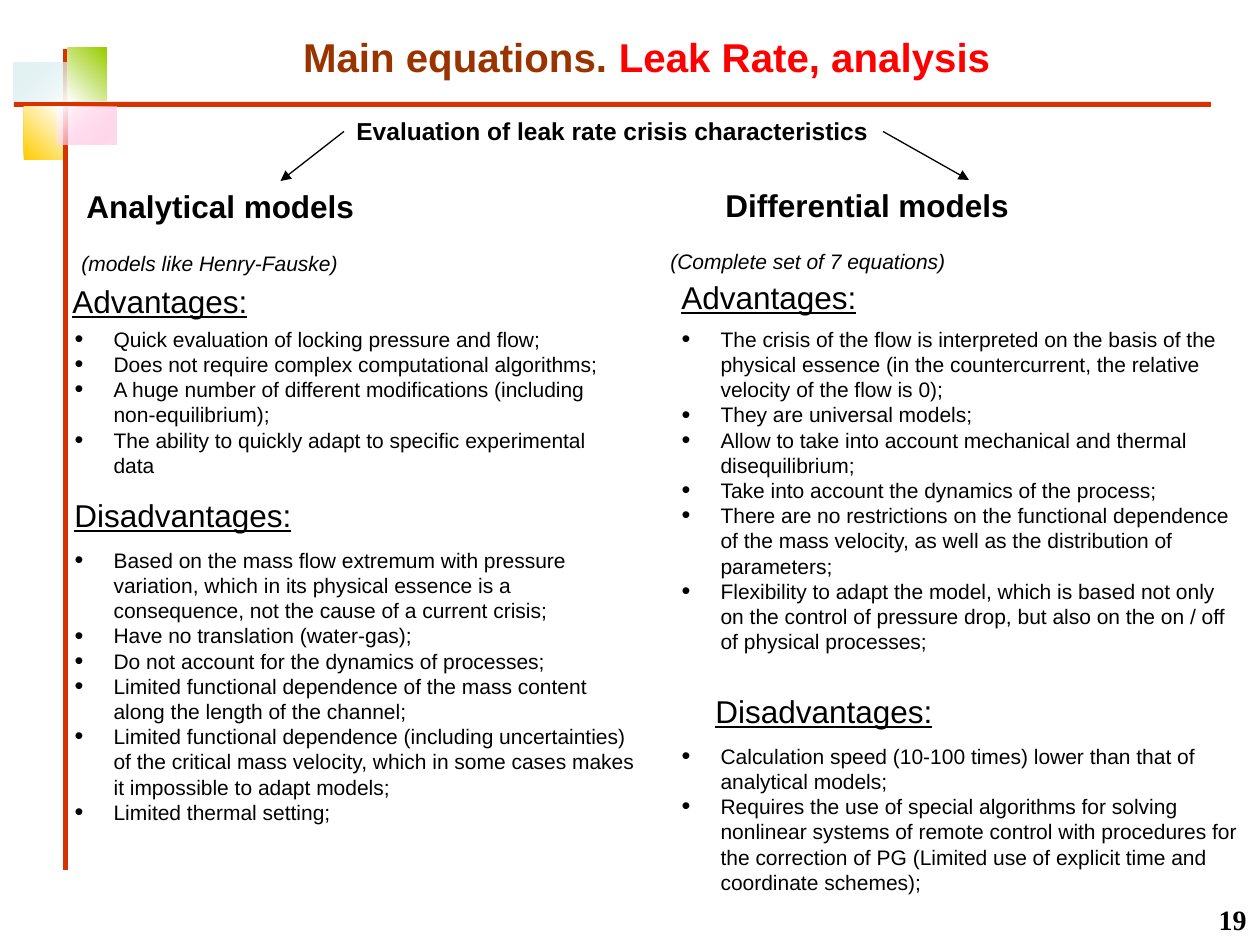
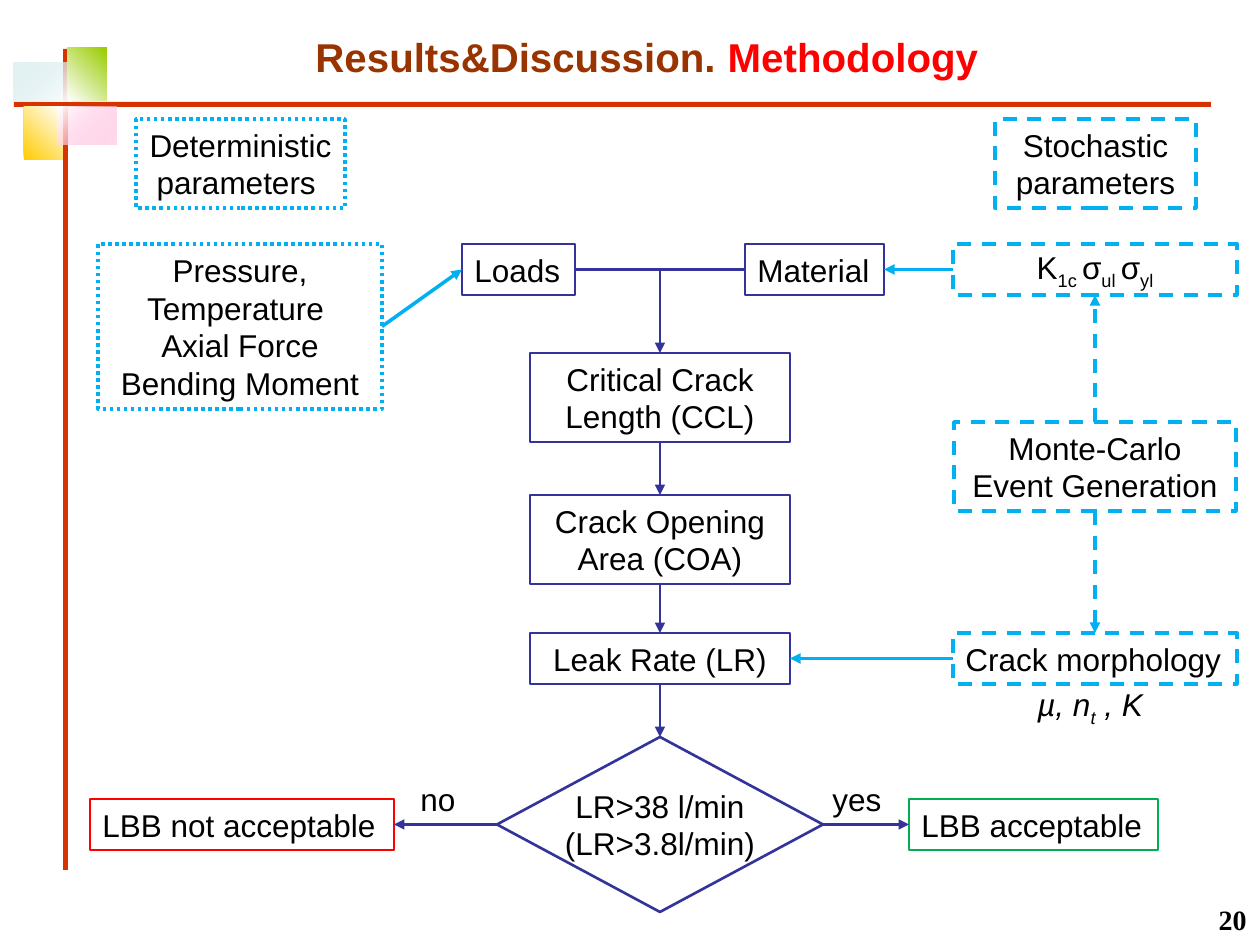
"""Build two slides on leak rate models and the leak-before-break methodology."""
from dataclasses import dataclass

from lxml import etree
from pptx import Presentation
from pptx.dml.color import RGBColor
from pptx.enum.dml import MSO_LINE
from pptx.enum.shapes import MSO_CONNECTOR, MSO_SHAPE
from pptx.enum.text import MSO_ANCHOR, MSO_AUTO_SIZE, PP_ALIGN
from pptx.oxml.ns import qn
from pptx.util import Emu, Pt

RECT, DIAMOND = MSO_SHAPE.RECTANGLE, MSO_SHAPE.DIAMOND
STRAIGHT = MSO_CONNECTOR.STRAIGHT
DASH, DOT = MSO_LINE.DASH, MSO_LINE.ROUND_DOT
LEFT, CENTER, RIGHT = PP_ALIGN.LEFT, PP_ALIGN.CENTER, PP_ALIGN.RIGHT
TOP_SIDE, LEFT_SIDE, BOTTOM_SIDE, RIGHT_SIDE = range(4)

BLACK = RGBColor(0x00, 0x00, 0x00)
WHITE = RGBColor(0xFF, 0xFF, 0xFF)
BAND = RGBColor(0xD6, 0x33, 0x00)
BROWN = RGBColor(0x99, 0x33, 0x00)
RED = RGBColor(0xFF, 0x00, 0x00)
GREEN = RGBColor(0x00, 0xB0, 0x50)
INDIGO = RGBColor(0x33, 0x33, 0x99)
SKY = RGBColor(0x00, 0xB0, 0xF0)
PALE_TEAL = RGBColor(0xBB, 0xE0, 0xE3)
LIME = RGBColor(0x99, 0xCC, 0x00)
GOLD = RGBColor(0xFF, 0xCC, 0x00)
PINK = RGBColor(0xFF, 0x99, 0xCC)

PX = 914400 / 126
SLIDE_W, SLIDE_H = 1260, 945
BULLET_INDENT = 39
Box = tuple[int, int, int, int]


@dataclass
class Span:
    text: str
    size: int = 18
    color: RGBColor = BLACK
    bold: bool = False
    italic: bool = False
    underline: bool = False
    subscript: bool = False
    font: str = "Arial"


@dataclass
class Tile:
    box: Box
    start: RGBColor
    end: RGBColor
    angle: int
    opacity: dict[RGBColor, int]


@dataclass
class Node:
    box: Box
    lines: list[list[Span]]
    color: RGBColor = INDIGO
    align: PP_ALIGN = CENTER
    width: float = 1.5
    dash: MSO_LINE | None = None
    form: MSO_SHAPE = RECT
    wrap: bool = True


@dataclass
class Flow:
    source: str
    source_side: int
    target: str
    target_side: int
    color: RGBColor = INDIGO
    width: float = 1.5
    dash: MSO_LINE | None = None
    arrow: bool = True


TILES = [
    Tile((14, 63, 58, 39), PALE_TEAL, WHITE, 315, {PALE_TEAL: 40}),
    Tile((68, 48, 39, 53), WHITE, LIME, 45, {}),
    Tile((24, 107, 39, 53), GOLD, WHITE, 45, {}),
    Tile((58, 107, 59, 38), WHITE, PINK, 315, {PINK: 34}),
]

LISTS: list[tuple[Box, list[str]]] = [
    ((62, 320, 563, 165), [
        "Quick evaluation of locking pressure and flow;",
        "Does not require complex computational algorithms;",
        "A huge number of different modifications (including non-equilibrium);",
        "The ability to quickly adapt to specific experimental data",
    ]),
    ((62, 541, 588, 292), [
        "Based on the mass flow extremum with pressure variation, which in its physical "
        "essence is a consequence, not the cause of a current crisis;",
        "Have no translation (water-gas);",
        "Do not account for the dynamics of processes;",
        "Limited functional dependence of the mass content along the length of the channel;",
        "Limited functional dependence (including uncertainties) of the critical mass "
        "velocity, which in some cases makes it impossible to adapt models;",
        "Limited thermal setting;",
    ]),
    ((669, 320, 575, 344), [
        "The crisis of the flow is interpreted on the basis of the physical essence "
        "(in the countercurrent, the relative velocity of the flow is 0);",
        "They are universal models;",
        "Allow to take into account mechanical and thermal disequilibrium;",
        "Take into account the dynamics of the process;",
        "There are no restrictions on the functional dependence of the mass velocity, "
        "as well as the distribution of parameters;",
        "Flexibility to adapt the model, which is based not only on the control of "
        "pressure drop, but also on the on / off of physical processes;",
    ]),
    ((669, 737, 591, 165), [
        "Calculation speed (10-100 times) lower than that of analytical models;",
        "Requires the use of special algorithms for solving nonlinear systems of remote "
        "control with procedures for the correction of PG (Limited use of explicit time "
        "and coordinate schemes);",
    ]),
]

CAPTIONS: list[tuple[Box, Span]] = [
    ((60, 276, 297, 51), Span("Advantages:", underline=True)),
    ((62, 490, 281, 51), Span("Disadvantages:", underline=True)),
    ((669, 272, 270, 51), Span("Advantages:", underline=True)),
    ((703, 686, 296, 51), Span("Disadvantages:", underline=True)),
    ((658, 242, 314, 38), Span("(Complete set of 7 equations)", 12, italic=True)),
    ((69, 244, 318, 38), Span("(models like Henry-Fauske)", 12, italic=True)),
]

NODES = {
    "loads": Node((462, 244, 113, 51), [[Span("Loads")]], align=LEFT),
    "material": Node((745, 244, 139, 51), [[Span("Material")]], align=LEFT),
    "length": Node((530, 353, 260, 89), [[Span("Critical Crack Length (CCL)")]]),
    "area": Node((530, 495, 260, 89), [[Span("Crack Opening Area (COA)")]]),
    "leak": Node((530, 633, 260, 51), [[Span("Leak Rate (LR)")]]),
    "check": Node((497, 737, 326, 175), [[Span("LR>38 l/min")], [Span("(LR>3.8l/min)")]],
                  form=DIAMOND, wrap=False),
    "rejected": Node((90, 799, 304, 51), [[Span("LBB not acceptable")]], RED, LEFT),
    "accepted": Node((909, 799, 249, 51), [[Span("LBB acceptable")]], GREEN, LEFT),
    "morphology": Node((953, 633, 284, 51), [[Span("Crack morphology")]], SKY, LEFT, 2, DASH),
    "strength": Node((953, 244, 284, 51), [[
        Span("K"), Span("1c ", subscript=True), Span("σ"), Span("ul ", subscript=True),
        Span("σ"), Span("yl", subscript=True)]], SKY, CENTER, 2, DASH),
    "operation": Node((98, 244, 284, 165), [
        [Span("Pressure, Temperature ")], [Span("Axial Force")], [Span("Bending Moment")],
    ], SKY, CENTER, 2, DOT),
    "deterministic": Node((136, 119, 209, 89), [[Span("Deterministic parameters ")]],
                          SKY, CENTER, 2, DOT),
    "stochastic": Node((995, 119, 201, 89), [[Span("Stochastic parameters")]],
                       SKY, CENTER, 2, DASH),
    "sampling": Node((954, 422, 282, 89), [[Span("Monte-Carlo Event Generation")]],
                     SKY, CENTER, 2, DASH),
}

FLOWS = [
    Flow("loads", RIGHT_SIDE, "material", LEFT_SIDE, arrow=False),
    Flow("length", BOTTOM_SIDE, "area", TOP_SIDE),
    Flow("area", BOTTOM_SIDE, "leak", TOP_SIDE),
    Flow("leak", BOTTOM_SIDE, "check", TOP_SIDE),
    Flow("check", RIGHT_SIDE, "accepted", LEFT_SIDE),
    Flow("check", LEFT_SIDE, "rejected", RIGHT_SIDE),
    Flow("strength", LEFT_SIDE, "material", RIGHT_SIDE, SKY, 2),
    Flow("morphology", LEFT_SIDE, "leak", RIGHT_SIDE, SKY, 2),
    Flow("operation", RIGHT_SIDE, "loads", LEFT_SIDE, SKY, 2),
    Flow("sampling", TOP_SIDE, "strength", BOTTOM_SIDE, SKY, 2, DASH),
    Flow("sampling", BOTTOM_SIDE, "morphology", TOP_SIDE, SKY, 2, DASH),
]


def px(length: int) -> Emu:
    return Emu(round(length * PX))


def place(shape, box: Box) -> None:
    shape.left, shape.top, shape.width, shape.height = map(px, box)


def add_spans(paragraph, spans: list[Span]) -> None:
    for span in spans:
        run = paragraph.add_run()
        run.text = span.text
        font = run.font
        font.name, font.size, font.color.rgb = span.font, Pt(span.size), span.color
        font.bold, font.italic, font.underline = span.bold, span.italic, span.underline
        if span.subscript:
            run._r.get_or_add_rPr().set("baseline", "-25000")


def write(frame, lines: list[list[Span]], align: PP_ALIGN = LEFT, wrap: bool = True) -> None:
    frame.word_wrap = wrap
    for number, spans in enumerate(lines):
        paragraph = frame.add_paragraph() if number else frame.paragraphs[0]
        paragraph.alignment = align
        add_spans(paragraph, spans)


def add_label(slide, box: Box, spans: list[Span], align: PP_ALIGN = LEFT):
    label = slide.shapes.add_textbox(*map(px, box))
    write(label.text_frame, [spans], align)
    return label


def add_block(slide, box: Box, form: MSO_SHAPE = RECT):
    block = slide.shapes.add_shape(form, *map(px, box))
    block.shadow.inherit = False
    return block


def add_decor(slide) -> list:
    decor = []
    for box in ((14, 102, 1197, 5), (63, 49, 5, 821)):
        band = add_block(slide, box)
        band.fill.solid()
        band.fill.fore_color.rgb = BAND
        decor.append(band)
    for tile in TILES:
        square = add_block(slide, tile.box)
        square.fill.gradient()
        square.fill.gradient_angle = tile.angle
        for stop, color in zip(square.fill.gradient_stops, (tile.start, tile.end)):
            stop.color.rgb = color
        for tint in square.element.iter(qn("a:srgbClr")):
            for color, percent in tile.opacity.items():
                if tint.get("val") == str(color):
                    etree.SubElement(tint, qn("a:alpha"), val=str(percent * 1000))
        decor.append(square)
    for shape in decor:
        shape.line.fill.background()
    return decor


def add_slide(prs, layout: int, topic: str, subject: str, number: int):
    slide = prs.slides.add_slide(prs.slide_layouts[layout])
    title = slide.shapes.title
    place(title, (118, 25, 1058, 62))
    title.text_frame.auto_size = MSO_AUTO_SIZE.NONE
    write(title.text_frame, [[Span(topic, 23, BROWN, True), Span(subject, 23, RED, True)]], CENTER)
    add_label(slide, (1191, 896, 68, 42),
              [Span(str(number), 16, bold=True, font="Times New Roman")], RIGHT)
    return slide


def fill_list(body, box: Box, items: list[str]) -> None:
    place(body, box)
    frame = body.text_frame
    frame.auto_size, frame.vertical_anchor = MSO_AUTO_SIZE.NONE, MSO_ANCHOR.TOP
    write(frame, [[Span(item, 12)] for item in items])
    for paragraph in frame.paragraphs:
        paragraph.space_before = Pt(0)
        props = paragraph._p.get_or_add_pPr()
        props.set("marL", str(px(BULLET_INDENT)))
        props.set("indent", str(-px(BULLET_INDENT)))
        etree.SubElement(props, qn("a:buSzPct"), val="120000")
        etree.SubElement(props, qn("a:buFont"), typeface="Arial")
        etree.SubElement(props, qn("a:buChar"), char="•")


def add_line(slide, color: RGBColor, width: float, dash: MSO_LINE | None = None,
             arrow: bool = True, ends: Box = (0, 0, 0, 0)):
    line = slide.shapes.add_connector(STRAIGHT, *map(px, ends))
    line.line.color.rgb, line.line.width = color, Pt(width)
    if dash:
        line.line.dash_style = dash
    props = line.element.spPr
    if arrow:
        etree.SubElement(props.find(qn("a:ln")), qn("a:tailEnd"), type="triangle")
    etree.SubElement(props, qn("a:effectLst"))
    return line


def add_node(slide, node: Node):
    shape = add_block(slide, node.box, node.form)
    shape.fill.background()
    shape.line.color.rgb, shape.line.width = node.color, Pt(node.width)
    if node.dash:
        shape.line.dash_style = node.dash
    shape.text_frame.vertical_anchor = MSO_ANCHOR.MIDDLE
    write(shape.text_frame, node.lines, node.align, node.wrap)
    return shape


def build_models(prs):
    slide = add_slide(prs, 4, "Main equations. ", "Leak Rate, analysis", 19)
    for idx, (box, items) in enumerate(LISTS, 1):
        fill_list(slide.placeholders[idx], box, items)
    for box, caption in CAPTIONS:
        add_label(slide, box, [caption])
    evaluation = add_label(slide, (344, 110, 539, 43), [
        Span("Evaluation of leak rate crisis characteristics", 14, bold=True)])
    for side, name, box in ((LEFT_SIDE, "Analytical models", (74, 181, 413, 51)),
                            (RIGHT_SIDE, "Differential models", (713, 180, 512, 51))):
        family = add_label(slide, box, [Span(name, bold=True)])
        branch = add_line(slide, BLACK, 0.75)
        branch.begin_connect(evaluation, side)
        branch.end_connect(family, TOP_SIDE)
    return slide


def build_methodology(prs) -> None:
    slide = add_slide(prs, 5, "Results&Discussion. ", "Methodology", 20)
    steps = {key: add_node(slide, node) for key, node in NODES.items()}
    for flow in FLOWS:
        line = add_line(slide, flow.color, flow.width, flow.dash, flow.arrow)
        line.begin_connect(steps[flow.source], flow.source_side)
        line.end_connect(steps[flow.target], flow.target_side)
    trunk = add_line(slide, INDIGO, 1.5, ends=(660, 270, 660, 353))
    trunk.end_connect(steps["length"], TOP_SIDE)
    add_label(slide, (820, 774, 80, 51), [Span("yes")])
    add_label(slide, (408, 774, 66, 51), [Span("no")])
    add_label(slide, (1025, 679, 140, 51), [
        Span("µ, n", italic=True), Span("t", italic=True, subscript=True),
        Span(" , K", italic=True)])


def main() -> None:
    prs = Presentation()
    prs.slide_width, prs.slide_height = px(SLIDE_W), px(SLIDE_H)
    models = build_models(prs)
    for shape in add_decor(models):
        prs.slide_master.element.cSld.spTree.append(shape.element)
    build_methodology(prs)
    prs.save("out.pptx")


if __name__ == "__main__":
    main()
